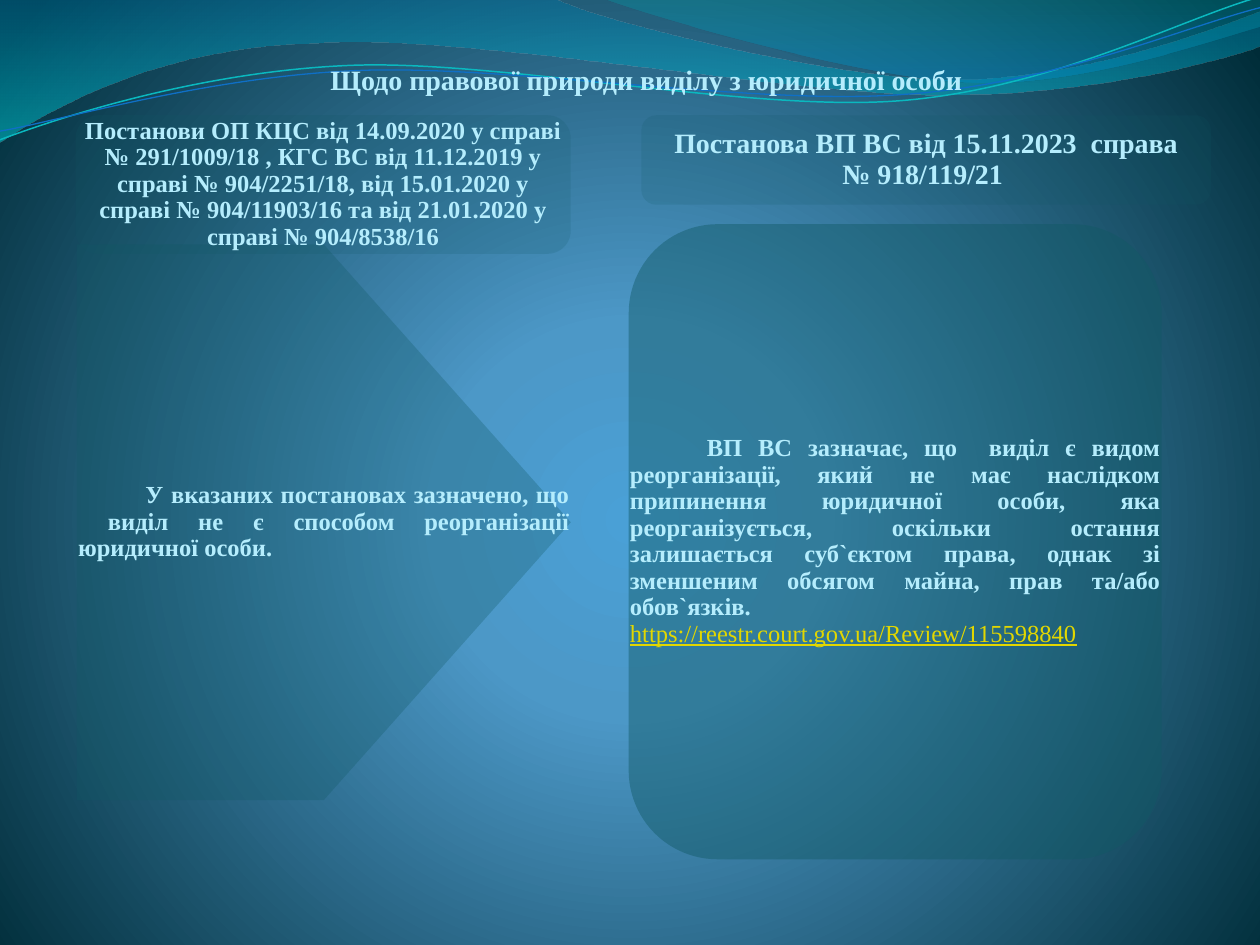
from dataclasses import dataclass

import lxml.etree
import pptx
import pptx.dml.color
import pptx.enum.shapes
import pptx.enum.text
import pptx.oxml.ns
import pptx.util

COLORS = {
    "text": "B5EDFD", "link": "E2D700", "panel": "115964",
    "glow": "4AA0D6", "mid": "4C98C7", "edge": "002C38",
    "wave top": "0074A1", "wave bottom": "00C6CF",
    "crest top": "00A1A9", "crest bottom": "008BBF",
    "cyan line": "0AB8BF", "blue line": "0F6FC6",
}
FONT = "Times New Roman"
COLUMNS, ROWS = 100, 75
LINE_TILT = 357.3
NO_BREAK_SPACE = chr(160)

SHAPE = pptx.enum.shapes.MSO_SHAPE
ALIGN = pptx.enum.text.PP_ALIGN
ANCHOR = pptx.enum.text.MSO_ANCHOR
qn = pptx.oxml.ns.qn

Point = tuple[float, float]
Stop = tuple[int, str, int]  # position %, colour name, opacity %


@dataclass
class Area:
    """A block of the grid, in columns and rows."""
    column: float
    row: float
    columns: float
    rows: float


@dataclass
class Line:
    text: str
    size: float = 14
    color: str = "text"
    bold: bool = True
    underline: bool = False
    align: ALIGN = ALIGN.JUSTIFY
    indent: float = 0
    spacing: float = 0.9


@dataclass
class Panel:
    area: Area
    outline: SHAPE
    opacity: int
    inset: float
    lines: list[Line]


@dataclass
class Wave:
    """Each segment is one end point, or two control points and an end point."""
    start: Point
    segments: list[tuple[Point, ...]]
    stops: tuple[Stop, ...] = ()
    line: str = ""
    width: float = 0
    tilt: float = 0


BACKGROUND = ((0, "glow", 100), (25, "mid", 100), (100, "edge", 100))

WAVES = [
    Wave((0, 0), [
        ((44, -0.1),),
        ((47.6, 1.7), (66.4, 6.3), (75.8, 6.3)),
        ((85.3, 6.3), (95.8, 2.6), (100, 0.9)),
        ((100.1, 3.6),),
        ((98.3, 4.4), (87, 7.6), (74.6, 7.5)),
        ((62.2, 7.5), (38.2, 2.8), (25.7, 3.4)),
        ((12.9, 3.6), (4.6, 8.3), (-0.1, 11.3)),
        ((0, 0),),
    ], stops=((0, "wave top", 45), (100, "wave bottom", 55))),
    Wave((47.9, -0.1), [
        ((50.9, 1.1), (68.2, 6.2), (76.9, 6.5)),
        ((85.6, 6.9), (96.1, 3.2), (100, 2.1)),
        ((100, 0),),
        ((47.9, -0.1),),
    ], stops=((0, "crest top", 30), (80, "crest bottom", 45))),
    Wave((-0.2, 8.74), [
        ((4.68, 7.17), (15.84, 4.09), (27.75, 4.15)),
        ((39.56, 4.21), (59.14, 9.34), (71.17, 9.01)),
        ((83.2, 8.67), (93.95, 3.57), (100.03, 2.16)),
    ], line="cyan line", width=0.85, tilt=LINE_TILT),
    Wave((-0.16, 8.05), [
        ((4.58, 7.47), (16.43, 4.52), (28.34, 4.58)),
        ((40.35, 4.65), (59.57, 8.86), (71.6, 8.52)),
        ((83.52, 8.28), (94.23, 4.18), (100.2, 2.97)),
    ], line="blue line", width=0.75, tilt=LINE_TILT),
]

TITLE_AREA = Area(6.7, 2.1, 89.2, 5.5)
TITLE = Line("Щодо правової природи виділу з юридичної особи",
             size=16, align=ALIGN.CENTER, spacing=1)

PANELS = [
    Panel(Area(6.1, 19.4, 39.2, 44.1), SHAPE.PENTAGON, 29, 0.1, [
        Line("У вказаних постановах зазначено, що  виділ не є способом "
             "реорганізації юридичної особи.", indent=5.35)]),
    Panel(Area(49.9, 17.8, 42.3, 50.4), SHAPE.FLOWCHART_ALTERNATE_PROCESS, 44, 0.1, [
        Line("ВП ВС зазначає, що  виділ є видом реорганізації, який не має "
             "наслідком припинення юридичної особи, яка реорганізується, "
             "оскільки остання залишається суб`єктом права, однак зі зменшеним "
             "обсягом майна, прав та/або обов`язків.", indent=6.1),
        Line("https://reestr.court.gov.ua/Review/115598840",
             color="link", bold=False, underline=True)]),
    Panel(Area(6, 9.15, 39.3, 11), SHAPE.ROUNDED_RECTANGLE, 17, 0.6, [
        Line("Постанови ОП КЦС від 14.09.2020 у справі № 291/1009/18 , КГС ВС "
             "від 11.12.2019 у справі № 904/2251/18, від 15.01.2020 у справі "
             "№ 904/11903/16 та від 21.01.2020 у справі № 904/8538/16",
             align=ALIGN.CENTER)]),
    Panel(Area(50.9, 9.15, 45.2, 7.1), SHAPE.ROUNDED_RECTANGLE, 16, 0.7, [
        Line(f"Постанова ВП ВС від 15.11.2023  справа №{NO_BREAK_SPACE}918/119/21 ",
             size=16, align=ALIGN.CENTER)]),
]

deck = pptx.Presentation()
deck.slide_width = pptx.util.Inches(10)
deck.slide_height = pptx.util.Inches(7.5)
slide = deck.slides.add_slide(deck.slide_layouts[6])


def across(columns: float) -> int:
    return round(deck.slide_width * columns / COLUMNS)


def down(rows: float) -> int:
    return round(deck.slide_height * rows / ROWS)


def frame(area: Area) -> tuple[int, int, int, int]:
    return (across(area.column), down(area.row),
            across(area.columns), down(area.rows))


def rgb(name: str) -> pptx.dml.color.RGBColor:
    return pptx.dml.color.RGBColor.from_string(COLORS[name])


def add_opacity(color_element, percent: int) -> None:
    lxml.etree.SubElement(color_element, qn("a:alpha"), val=str(percent * 1000))


def set_gradient(fill, owner, stops: tuple[Stop, ...], radial: bool = False) -> None:
    """Give the fill of owner a gradient running down or out from a centre."""
    fill.solid()
    solid = owner.find(".//" + qn("a:solidFill"))
    gradient = lxml.etree.Element(qn("a:gradFill"), rotWithShape="1")
    stop_list = lxml.etree.SubElement(gradient, qn("a:gsLst"))
    for position, color, opacity in stops:
        stop = lxml.etree.SubElement(stop_list, qn("a:gs"), pos=str(position * 1000))
        shade = lxml.etree.SubElement(stop, qn("a:srgbClr"), val=COLORS[color])
        if opacity < 100:
            add_opacity(shade, opacity)
    if radial:
        circle = lxml.etree.SubElement(gradient, qn("a:path"), path="circle")
        lxml.etree.SubElement(circle, qn("a:fillToRect"),
                              l="10000", t="110000", r="10000", b="100000")
    else:
        lxml.etree.SubElement(gradient, qn("a:lin"), ang="5400000", scaled="0")
    solid.getparent().replace(solid, gradient)


def bend(shape, segments: list[tuple[Point, ...]]) -> None:
    """Turn the straight steps of each three-point segment into one curve."""
    steps = iter(shape.element.findall(".//" + qn("a:lnTo")))
    for segment in segments:
        parts = [next(steps) for _ in segment]
        if len(parts) == 3:
            curve = lxml.etree.Element(qn("a:cubicBezTo"))
            parts[0].addprevious(curve)
            for part in parts:
                curve.append(part[0])
                part.getparent().remove(part)


def draw_wave(wave: Wave) -> None:
    points = [wave.start] + [point for segment in wave.segments for point in segment]
    vertices = [(across(x), down(y)) for x, y in points]
    builder = slide.shapes.build_freeform(*vertices[0])
    builder.add_line_segments(vertices[1:], close=bool(wave.stops))
    shape = builder.convert_to_shape()
    bend(shape, wave.segments)
    shape.rotation = wave.tilt
    shape.shadow.inherit = False
    if wave.stops:
        set_gradient(shape.fill, shape.element.spPr, wave.stops)
        shape.line.fill.background()
    else:
        shape.fill.background()
        shape.line.color.rgb = rgb(wave.line)
        shape.line.width = pptx.util.Pt(wave.width)


def write(area: Area, lines: list[Line], inset: float, anchor: ANCHOR) -> None:
    text = slide.shapes.add_textbox(*frame(area)).text_frame
    text.word_wrap = True
    text.vertical_anchor = anchor
    text.margin_left = text.margin_right = across(inset)
    text.margin_top = text.margin_bottom = down(inset)
    text.text = "\n".join(line.text for line in lines)
    for paragraph, line in zip(text.paragraphs, lines):
        paragraph.alignment = line.align
        paragraph.line_spacing = line.spacing
        if line.indent:
            properties = paragraph._p.get_or_add_pPr()
            properties.set("marL", "0")
            properties.set("indent", str(across(line.indent)))
        for run in paragraph.runs:
            run.font.name = FONT
            run.font.size = pptx.util.Pt(line.size)
            run.font.bold = line.bold
            run.font.underline = line.underline
            run.font.color.rgb = rgb(line.color)


def draw_panel(panel: Panel) -> None:
    shape = slide.shapes.add_shape(panel.outline, *frame(panel.area))
    shape.shadow.inherit = False
    shape.fill.solid()
    shape.fill.fore_color.rgb = rgb("panel")
    add_opacity(shape.element.spPr.find(".//" + qn("a:srgbClr")), panel.opacity)
    shape.line.fill.background()
    write(panel.area, panel.lines, panel.inset, ANCHOR.MIDDLE)


set_gradient(slide.background.fill, slide.element, BACKGROUND, radial=True)
for wave in WAVES:
    draw_wave(wave)
write(TITLE_AREA, [TITLE], 0, ANCHOR.BOTTOM)
for panel in PANELS:
    draw_panel(panel)
deck.save("out.pptx")
